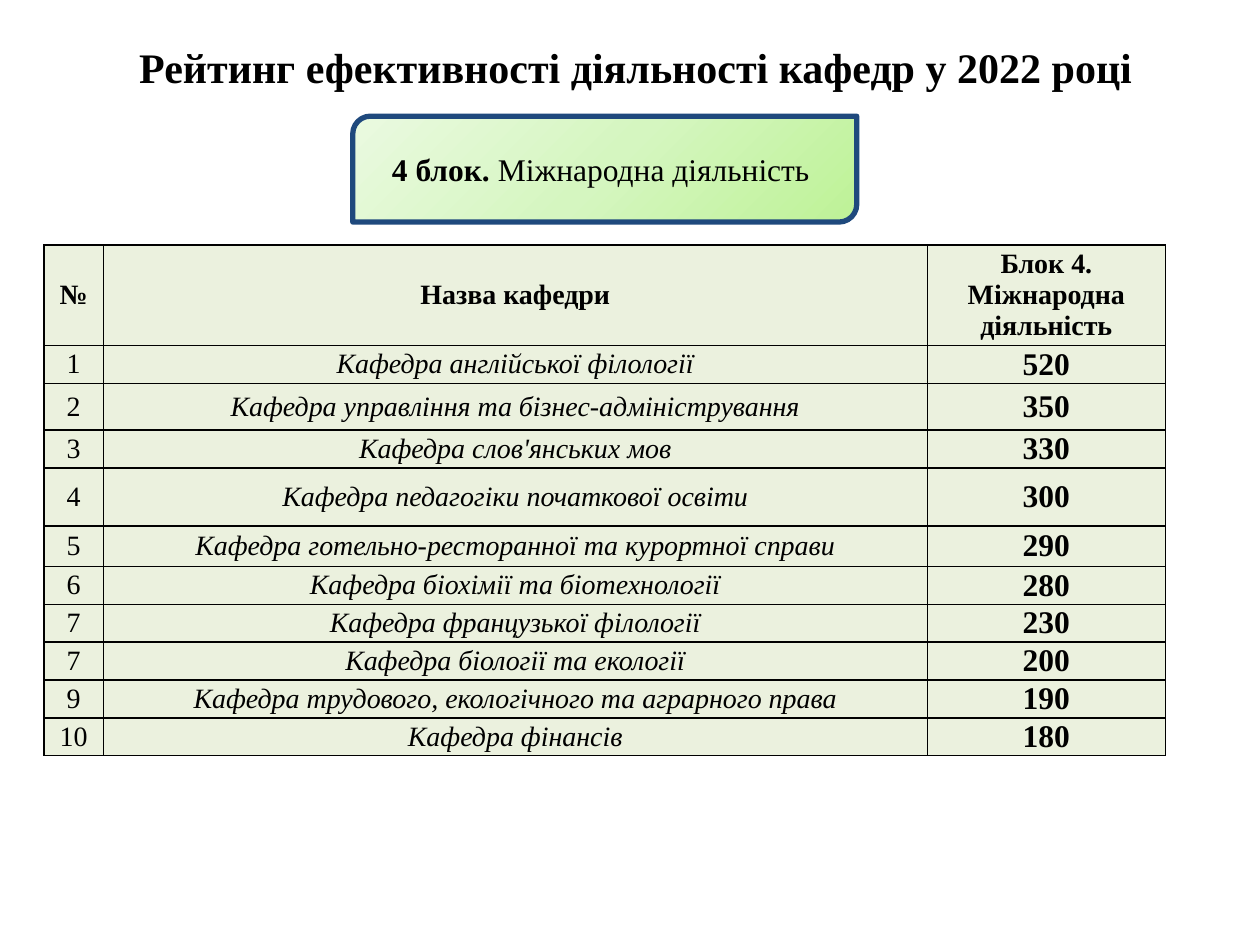
from pptx import Presentation
from pptx.dml.color import RGBColor
from pptx.enum.shapes import MSO_SHAPE
from pptx.enum.text import MSO_ANCHOR, MSO_AUTO_SIZE, PP_ALIGN
from pptx.oxml import parse_xml
from pptx.oxml.ns import nsdecls, qn
from pptx.util import Inches, Pt

W, H = Inches(10), Inches(7.5)
FONT = "Times New Roman"
BLACK = RGBColor(0x00, 0x00, 0x00)
NAVY = RGBColor(0x1F, 0x49, 0x7D)
CELL = RGBColor(0xEB, 0xF1, 0xDE)
GREENS = (
    (0, RGBColor(0xBE, 0xF2, 0x97)),
    (50, RGBColor(0xD5, 0xF6, 0xC0)),
    (100, RGBColor(0xEA, 0xFA, 0xE0)),
)

HEADER = ("№", "Назва кафедри", "Блок 4. Міжнародна діяльність")
RATING = (
    ("1", "Кафедра англійської філології", "520"),
    ("2", "Кафедра управління та бізнес-адміністрування", "350"),
    ("3", "Кафедра слов'янських мов", "330"),
    ("4", "Кафедра педагогіки початкової освіти", "300"),
    ("5", "Кафедра готельно-ресторанної та курортної справи", "290"),
    ("6", "Кафедра біохімії та біотехнології", "280"),
    ("7", "Кафедра французької філології", "230"),
    ("7", "Кафедра біології та екології", "200"),
    ("9", "Кафедра трудового, екологічного та аграрного права", "190"),
    ("10", "Кафедра фінансів", "180"),
)
COL_PARTS = (47, 654, 189)
ROW_PARTS = (79, 30, 37, 30, 46, 32, 30, 30, 30, 30, 30)
HEADER_STYLE = (16, True, False)
COL_STYLES = ((16, False, False), (16, False, True), (18, True, False))


def box(left, top, width, height):
    return int(W * left), int(H * top), int(W * width), int(H * height)


def add_run(p, text, size, bold=False, italic=False):
    p.alignment = PP_ALIGN.CENTER
    r = p.add_run()
    r.text = text
    r.font.name = FONT
    r.font.size = Pt(size)
    r.font.bold = bold
    r.font.italic = italic
    r.font.color.rgb = BLACK


def add_title(s, area):
    sp = s.shapes.title
    sp.left, sp.top, sp.width, sp.height = area
    tf = sp.text_frame
    tf.auto_size = MSO_AUTO_SIZE.SHAPE_TO_FIT_TEXT
    tf.vertical_anchor = MSO_ANCHOR.TOP
    add_run(tf.paragraphs[0], "Рейтинг ефективності діяльності кафедр у 2022 році", 24, True)


def fill_radial(sp, stops):
    sp.fill.gradient()
    gs = "".join(
        f'<a:gs pos="{pos * 1000}"><a:srgbClr val="{color}"/></a:gs>' for pos, color in stops
    )
    grad = parse_xml(
        f'<a:gradFill {nsdecls("a")} rotWithShape="1"><a:gsLst>{gs}</a:gsLst>'
        '<a:path path="circle"><a:fillToRect l="100000" t="100000"/></a:path></a:gradFill>'
    )
    sp_pr = sp._element.spPr
    sp_pr.replace(sp_pr.find(qn("a:gradFill")), grad)


def add_block_label(s, area):
    sp = s.shapes.add_shape(MSO_SHAPE.ROUND_2_DIAG_RECTANGLE, *area)
    sp.shadow.inherit = False
    fill_radial(sp, GREENS)
    sp.line.color.rgb = NAVY
    sp.line.width = Pt(3)
    tf = sp.text_frame
    tf.word_wrap = True
    tf.vertical_anchor = MSO_ANCHOR.MIDDLE
    p = tf.paragraphs[0]
    add_run(p, "4 блок. ", 18, True)
    add_run(p, "Міжнародна діяльність ", 18)


def add_borders(cell):
    tc_pr = cell._tc.get_or_add_tcPr()
    for i, side in enumerate(("lnL", "lnR", "lnT", "lnB")):
        tc_pr.insert(i, parse_xml(
            f'<a:{side} {nsdecls("a")} w="{Pt(1)}"><a:solidFill>'
            f'<a:srgbClr val="{BLACK}"/></a:solidFill></a:{side}>'
        ))


def format_cell(cell, text, style):
    cell.fill.solid()
    cell.fill.fore_color.rgb = CELL
    cell.vertical_anchor = MSO_ANCHOR.MIDDLE
    cell.margin_left = cell.margin_right = Inches(0.03)
    cell.margin_top = cell.margin_bottom = 0
    add_borders(cell)
    add_run(cell.text_frame.paragraphs[0], text, *style)


def add_rating_table(s, area):
    rows = (HEADER, *RATING)
    table = s.shapes.add_table(len(rows), len(HEADER), *area).table
    table.first_row = table.horz_banding = False
    for col, part in zip(table.columns, COL_PARTS):
        col.width = int(area[2] * part / sum(COL_PARTS))
    for row, part in zip(table.rows, ROW_PARTS):
        row.height = int(area[3] * part / sum(ROW_PARTS))
    for i, values in enumerate(rows):
        for j, text in enumerate(values):
            format_cell(table.cell(i, j), text, COL_STYLES[j] if i else HEADER_STYLE)


def main():
    prs = Presentation()
    prs.slide_width, prs.slide_height = W, H
    s = prs.slides.add_slide(prs.slide_layouts[5])
    add_title(s, box(0.063, 0.037, 0.883, 0.067))
    add_block_label(s, box(0.28, 0.123, 0.4, 0.112))
    add_rating_table(s, box(0.035, 0.259, 0.89, 0.54))
    prs.save("out.pptx")


if __name__ == "__main__":
    main()
